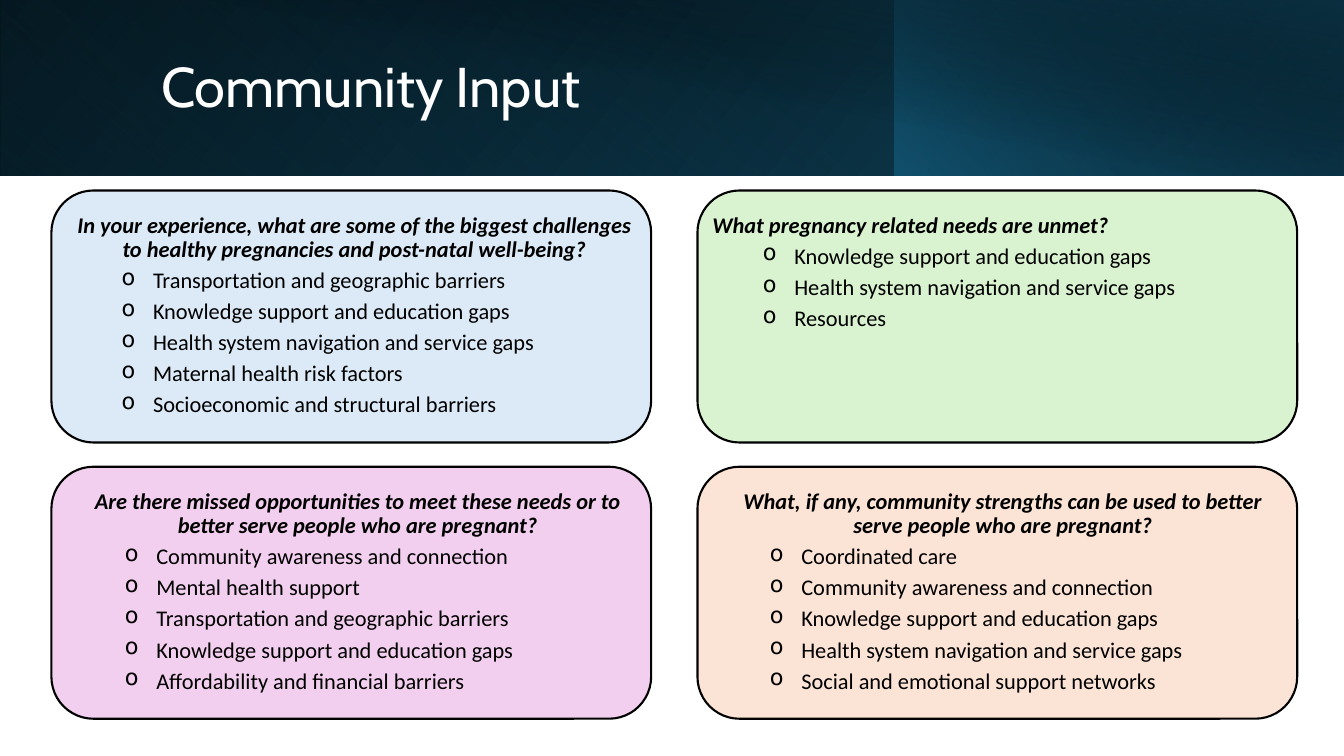
from dataclasses import dataclass

from lxml import etree
from pptx import Presentation
from pptx.dml.color import RGBColor
from pptx.enum.shapes import MSO_SHAPE
from pptx.enum.text import MSO_ANCHOR, PP_ALIGN
from pptx.oxml.ns import qn
from pptx.util import Pt

RECT = MSO_SHAPE.RECTANGLE
ROUND = MSO_SHAPE.ROUNDED_RECTANGLE
LEFT, CENTER = PP_ALIGN.LEFT, PP_ALIGN.CENTER
TOP, MIDDLE = MSO_ANCHOR.TOP, MSO_ANCHOR.MIDDLE


@dataclass(frozen=True)
class Theme:
    """Colours, fonts and type sizes of the slide."""
    ink: str = "000000"
    paper: str = "FFFFFF"
    navy: str = "0B3041"
    teal: str = "156082"
    deep: str = "104862"
    sky: str = "DCEAF7"
    mint: str = "D9F2D0"
    pink: str = "F2CFEE"
    peach: str = "FBE3D6"
    head: str = "Cabin"
    body: str = "Calibri"
    big: float = 40
    small: float = 16


THEME = Theme()
WIDE, HIGH = 960, 540
BANNER = (0, 0, WIDE, 125.5)
CARD_W, CARD_H = 428.4, 180
GRID_X, GRID_Y = 36.7, 136.1
STEP_X, STEP_Y = 461.5, 197.3
TEXT_W, TEXT_Y = 419, 13
LINE_H, PAD_H = 20.9, 30.2

CARDS = [
    (THEME.sky, 7, CENTER, 2,
     "In your experience, what are some of the biggest challenges "
     "to healthy pregnancies and post-natal well-being?",
     ["Transportation and geographic barriers",
      "Knowledge support and education gaps",
      "Health system navigation and service gaps",
      "Maternal health risk factors",
      "Socioeconomic and structural barriers"]),
    (THEME.mint, 3.6, LEFT, 1,
     "What pregnancy related needs are unmet?",
     ["Knowledge support and education gaps",
      "Health system navigation and service gaps",
      "Resources"]),
    (THEME.pink, 9.4, CENTER, 2,
     "Are there missed opportunities to meet these needs or to "
     "better serve people who are pregnant?",
     ["Community awareness and connection",
      "Mental health support",
      "Transportation and geographic barriers",
      "Knowledge support and education gaps",
      "Affordability and financial barriers"]),
    (THEME.peach, 8.6, CENTER, 2,
     "What, if any, community strengths can be used to better "
     "serve people who are pregnant?",
     ["Coordinated care",
      "Community awareness and connection",
      "Knowledge support and education gaps",
      "Health system navigation and service gaps",
      "Social and emotional support networks"]),
]


def block(slide, kind, box):
    """Add a preset shape without shadow."""
    shape = slide.shapes.add_shape(kind, *map(Pt, box))
    shape.shadow.inherit = False
    return shape


def frame(slide, box, anchor=TOP):
    """Add a wrapping text box and return its text frame."""
    text = slide.shapes.add_textbox(*map(Pt, box)).text_frame
    text.word_wrap = True
    text.vertical_anchor = anchor
    return text


def write(para, text, font=THEME.body, size=THEME.small, color=THEME.ink,
          bold=False, align=LEFT, before=0, bullet=None):
    """Fill a paragraph with formatted text."""
    if bullet:
        para.level = 1
        props = para._p.get_or_add_pPr()
        props.set("marL", str(Pt(58.5)))
        props.set("indent", str(Pt(-22.5)))
        etree.SubElement(props, qn("a:buChar")).set("char", bullet)
    para.alignment = align
    para.line_spacing = 0.9
    para.space_before = Pt(before)
    run = para.add_run()
    run.text = text
    run.font.name = font
    run.font.size = Pt(size)
    run.font.bold = run.font.italic = bold
    run.font.color.rgb = RGBColor.from_string(color)


def shade(slide, box, stops, angle, flip=True, turn=0):
    """Add a borderless rectangle with a gradient of colour and opacity."""
    shape = block(slide, RECT, box)
    shape.line.fill.background()
    shape.rotation = turn
    shape.fill.background()
    props = shape._element.spPr
    if flip:
        props.find(qn("a:xfrm")).set("flipH", "1")
    grad = etree.Element(qn("a:gradFill"), rotWithShape="1")
    ramp = etree.SubElement(grad, qn("a:gsLst"))
    for place, color, alpha in stops:
        stop = etree.SubElement(ramp, qn("a:gs"), pos=str(place * 1000))
        tint = etree.SubElement(stop, qn("a:srgbClr"), val=color)
        if alpha < 100:
            etree.SubElement(tint, qn("a:alpha"), val=str(alpha * 1000))
    etree.SubElement(grad, qn("a:lin"), ang=str(angle * 60000), scaled="0")
    props.replace(props.find(qn("a:noFill")), grad)


def banner(slide, box, title):
    """Draw the layered banner and its title."""
    x, y, w, h = box
    split = 638.8
    shade(slide, box, [(0, THEME.ink, 100), (100, THEME.deep, 100)], 140)
    shade(slide, (x, y, split, h),
          [(20, THEME.teal, 0), (100, THEME.navy, 55)], 230, turn=180)
    shade(slide, (x + split, y, w - split, h),
          [(0, THEME.teal, 66), (100, THEME.ink, 30)], 220)
    shade(slide, (x + 36, y, w - 36, h),
          [(50, THEME.ink, 0), (99, THEME.navy, 52)], 280, flip=False)
    text = frame(slide, (x + 108, y + 23, 779, 81.4), MIDDLE)
    write(text.paragraphs[0], title, font=THEME.head, size=THEME.big,
          color=THEME.paper)


def card(slide, box, fill, inset, align, rows, ask, points):
    """Draw one rounded card with a question and its answers."""
    x, y, w, h = box
    shape = block(slide, ROUND, box)
    shape.fill.solid()
    shape.fill.fore_color.rgb = RGBColor.from_string(fill)
    shape.line.color.rgb = RGBColor.from_string(THEME.ink)
    shape.line.width = Pt(1.5)
    tall = PAD_H + LINE_H * (rows + len(points))
    text = frame(slide, (x + inset, y + TEXT_Y, TEXT_W, tall))
    write(text.paragraphs[0], ask, bold=True, align=align)
    for point in points:
        write(text.add_paragraph(), point, before=5, bullet="o")


def main():
    """Build and save the slide."""
    deck = Presentation()
    deck.slide_width, deck.slide_height = Pt(WIDE), Pt(HIGH)
    slide = deck.slides.add_slide(deck.slide_layouts[6])
    banner(slide, BANNER, "Community Input")
    for i, data in enumerate(CARDS):
        row, col = divmod(i, 2)
        box = (GRID_X + col * STEP_X, GRID_Y + row * STEP_Y, CARD_W, CARD_H)
        card(slide, box, *data)
    deck.save("out.pptx")


if __name__ == "__main__":
    main()
